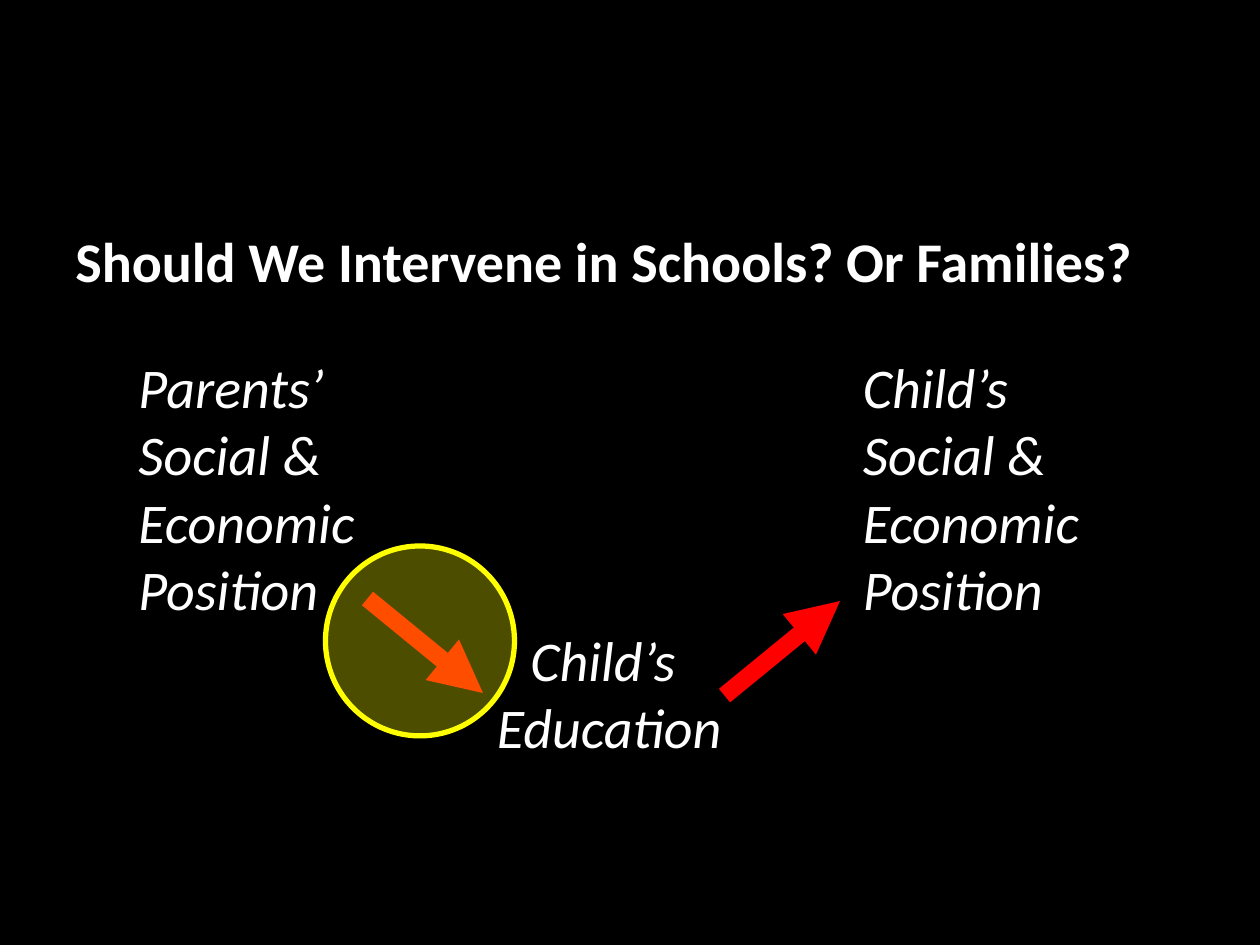
from dataclasses import dataclass

from lxml.etree import SubElement
from pptx import Presentation
from pptx.dml.color import RGBColor
from pptx.enum.shapes import MSO_CONNECTOR, MSO_SHAPE
from pptx.enum.text import MSO_AUTO_SIZE, PP_ALIGN
from pptx.oxml.ns import qn
from pptx.util import Pt


@dataclass(frozen=True)
class Theme:
    background: RGBColor = RGBColor(0, 0, 0)
    text: RGBColor = RGBColor(255, 255, 255)
    arrow: RGBColor = RGBColor(255, 0, 0)
    highlight: RGBColor = RGBColor(255, 255, 0)
    highlight_opacity: int = 30
    font: str = "Calibri"
    text_size: int = 32
    arrow_width: int = 10
    outline_width: int = 3


class SlideBuilder:
    def __init__(self, slide, theme):
        self.slide = slide
        self.theme = theme
        background = slide.background.fill
        background.solid()
        background.fore_color.rgb = theme.background

    def add_text(self, box, lines, wrap=False, bold=False, italic=False,
                 alignment=PP_ALIGN.LEFT):
        shape = self.slide.shapes.add_textbox(*map(Pt, box))
        frame = shape.text_frame
        frame.word_wrap = wrap
        frame.auto_size = MSO_AUTO_SIZE.NONE if wrap else MSO_AUTO_SIZE.SHAPE_TO_FIT_TEXT
        for index, line in enumerate(lines):
            paragraph = frame.add_paragraph() if index else frame.paragraphs[0]
            paragraph.alignment = alignment
            run = paragraph.add_run()
            run.text = line
            run.font.name = self.theme.font
            run.font.size = Pt(self.theme.text_size)
            run.font.bold = bold
            run.font.italic = italic
            run.font.color.rgb = self.theme.text

    def add_arrow(self, start, end):
        connector = self.slide.shapes.add_connector(
            MSO_CONNECTOR.STRAIGHT, *map(Pt, start + end))
        connector.line.color.rgb = self.theme.arrow
        connector.line.width = Pt(self.theme.arrow_width)
        properties = connector.line._get_or_add_ln()
        SubElement(properties, qn("a:tailEnd"), type="triangle")
        SubElement(connector._element.spPr, qn("a:effectLst"))

    def add_highlight(self, box):
        shape = self.slide.shapes.add_shape(MSO_SHAPE.OVAL, *map(Pt, box))
        shape.shadow.inherit = False
        shape.fill.solid()
        shape.fill.fore_color.rgb = self.theme.highlight
        color = shape._element.spPr.find(qn("a:solidFill"))[0]
        SubElement(color, qn("a:alpha"), val=str(self.theme.highlight_opacity * 1000))
        shape.line.color.rgb = self.theme.highlight
        shape.line.width = Pt(self.theme.outline_width)


def main():
    presentation = Presentation()
    presentation.slide_width = Pt(720)
    presentation.slide_height = Pt(540)
    slide = presentation.slides.add_slide(presentation.slide_layouts[6])
    builder = SlideBuilder(slide, Theme())

    builder.add_text((36, 126, 648, 356.4),
                     ["Should We Intervene in Schools? Or Families?"],
                     wrap=True, bold=True)
    for left, person in ((72, "Parents’"), (486, "Child’s")):
        builder.add_text((left, 198, 148.3, 162.7),
                         [person, "Social &", "Economic", "Position"], italic=True)
    builder.add_text((275.8, 354, 144.7, 85), ["Child’s ", "Education"],
                     italic=True, alignment=PP_ALIGN.CENTER)
    builder.add_arrow((210, 342), (276, 396))
    builder.add_arrow((414, 397.5), (480, 343.5))
    builder.add_highlight((186, 312, 108, 108.5))

    presentation.save("out.pptx")


if __name__ == "__main__":
    main()
